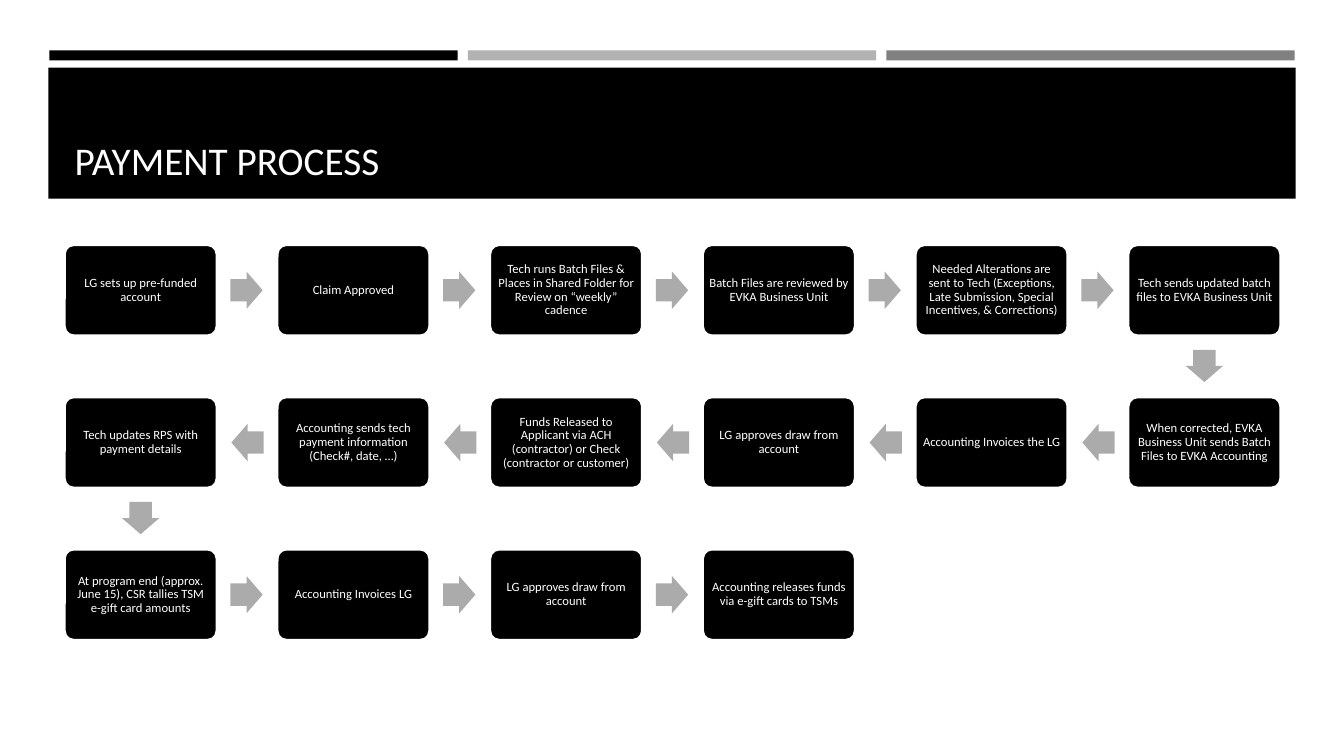
"""Build the payment process slide: a banner title over a winding flow of steps."""
from pptx import Presentation
from pptx.dml.color import RGBColor
from pptx.enum.shapes import MSO_SHAPE
from pptx.enum.text import MSO_ANCHOR, PP_ALIGN
from pptx.util import Inches, Pt

BLACK = RGBColor(0x00, 0x00, 0x00)
WHITE = RGBColor(0xFF, 0xFF, 0xFF)
LIGHT_GRAY = RGBColor(0xB2, 0xB2, 0xB2)
MID_GRAY = RGBColor(0x80, 0x80, 0x80)
ARROW_GRAY = RGBColor(0xAB, 0xAB, 0xAB)
RECT = MSO_SHAPE.RECTANGLE
ROUND_RECT = MSO_SHAPE.ROUNDED_RECTANGLE
ARROW = MSO_SHAPE.RIGHT_ARROW
CENTER, LEFT = PP_ALIGN.CENTER, PP_ALIGN.LEFT
MIDDLE, BOTTOM = MSO_ANCHOR.MIDDLE, MSO_ANCHOR.BOTTOM
FONT = "Calibri"

COLS = 6
GRID_X, GRID_Y = 0.64, 2.43
PITCH_X, PITCH_Y = 2.11, 1.51
BOX_W, BOX_H = 1.51, 0.9
ARROW_W, ARROW_H = 0.32, 0.37
ARROW_DX, ARROW_DY = 1.05, 0.75

STEPS = [
    "LG sets up pre-funded account",
    "Claim Approved",
    "Tech runs Batch Files & Places in Shared Folder for Review on “weekly” cadence",
    "Batch Files are reviewed by EVKA Business Unit",
    "Needed Alterations are sent to Tech (Exceptions, Late Submission, "
    "Special Incentives, & Corrections)",
    "Tech sends updated batch files to EVKA Business Unit",
    "When corrected, EVKA Business Unit sends Batch Files to EVKA Accounting",
    "Accounting Invoices the LG",
    "LG approves draw from account",
    "Funds Released to Applicant via ACH (contractor) or Check (contractor or customer)",
    "Accounting sends tech payment information (Check#, date, …)",
    "Tech updates RPS with payment details",
    "At program end (approx. June 15), CSR tallies TSM e-gift card amounts",
    "Accounting Invoices LG",
    "LG approves draw from account",
    "Accounting releases funds via e-gift cards to TSMs",
]


def add_block(kind, x, y, w, h, color):
    sp = s.shapes.add_shape(kind, Inches(x), Inches(y), Inches(w), Inches(h))
    sp.shadow.inherit = False
    sp.fill.solid()
    sp.fill.fore_color.rgb = color
    sp.line.fill.background()
    return sp


def write(tf, text, size, align, anchor):
    tf.word_wrap = True
    tf.vertical_anchor = anchor
    p = tf.paragraphs[0]
    p.text = text
    p.alignment = align
    p.line_spacing = 0.9
    p.font.name = FONT
    p.font.size = Pt(size)
    p.font.color.rgb = WHITE


prs = Presentation()
prs.slide_width, prs.slide_height = Inches(13.33), Inches(7.5)
s = prs.slides.add_slide(prs.slide_layouts[5])

for i, color in enumerate((BLACK, LIGHT_GRAY, MID_GRAY)):
    add_block(RECT, 0.49 + i * 4.15, 0.5, 4.05, 0.1, color)
banner = add_block(RECT, 0.48, 0.67, 12.37, 1.3, BLACK)

title = s.shapes.title
title.left, title.top = Inches(0.64), Inches(0.77)
title.width, title.height = Inches(12.06), Inches(1.11)
write(title.text_frame, "PAYMENT PROCESS", 28, LEFT, BOTTOM)
banner.element.addnext(title.element)

for i, text in enumerate(STEPS):
    row, place = divmod(i, COLS)
    forward = row % 2 == 0
    col = place if forward else COLS - 1 - place
    x, y = GRID_X + col * PITCH_X, GRID_Y + row * PITCH_Y

    box = add_block(ROUND_RECT, x, y, BOX_W, BOX_H, BLACK)
    box.adjustments[0] = 0.1
    box.line.color.rgb = WHITE
    box.line.width = Pt(1.75)
    tf = box.text_frame
    tf.margin_left = tf.margin_right = tf.margin_top = tf.margin_bottom = Inches(0.04)
    write(tf, text, 9, CENTER, MIDDLE)

    if i == len(STEPS) - 1:
        break
    if place == COLS - 1:
        dx, dy, turn = 0, ARROW_DY, 90
    elif forward:
        dx, dy, turn = ARROW_DX, 0, 0
    else:
        dx, dy, turn = -ARROW_DX, 0, 180
    arrow = add_block(ARROW, x + (BOX_W - ARROW_W) / 2 + dx, y + (BOX_H - ARROW_H) / 2 + dy,
                      ARROW_W, ARROW_H, ARROW_GRAY)
    arrow.adjustments[0] = 0.6
    arrow.rotation = turn

prs.save("out.pptx")
